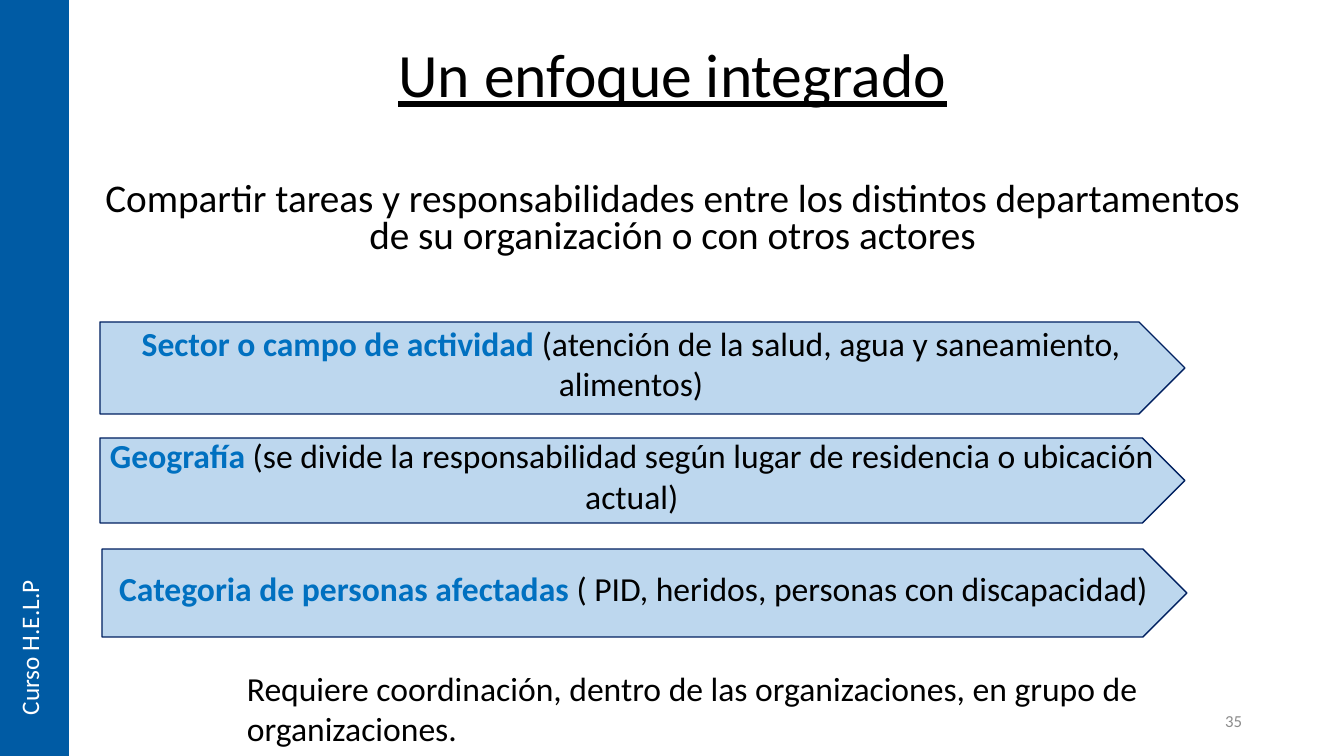
from pptx import Presentation
from pptx.dml.color import RGBColor
from pptx.enum.shapes import MSO_SHAPE
from pptx.enum.text import MSO_ANCHOR, PP_ALIGN
from pptx.util import Emu, Pt

PX = 914400 / 100.8
RECT, ARROW = MSO_SHAPE.RECTANGLE, MSO_SHAPE.PENTAGON
TOP, MID = MSO_ANCHOR.TOP, MSO_ANCHOR.MIDDLE
LEFT, CENTER, RIGHT = PP_ALIGN.LEFT, PP_ALIGN.CENTER, PP_ALIGN.RIGHT


def color(text):
    return RGBColor.from_string(text)


def write(shape, runs, size, align, anchor):
    frame = shape.text_frame
    frame.word_wrap = True
    frame.vertical_anchor = anchor
    para = frame.paragraphs[0]
    para.alignment = align
    for text, tint, bold in runs:
        run = para.add_run()
        run.text = text
        run.font.name = "Calibri"
        run.font.size = Pt(size)
        run.font.bold = bold
        run.font.color.rgb = color(tint)
    return para


deck = Presentation()
deck.slide_width = Emu(round(1344 * PX))
deck.slide_height = Emu(round(756 * PX))
slide = deck.slides.add_slide(deck.slide_layouts[6])
shapes = slide.shapes

bar = shapes.add_shape(RECT, 0, 0, Emu(round(69 * PX)), deck.slide_height)
bar.shadow.inherit = False
bar.fill.solid()
bar.fill.fore_color.rgb = color("005BA4")
bar.line.fill.background()

labels = [
    ((93, 5, 1159, 146), "Un enfoque integrado", 44, "000000", CENTER, MID),
    ((93, 177, 1159, 90), "Compartir tareas y responsabilidades entre los distintos "
     "departamentos de su organización o con otros actores", 28, "000000", CENTER, TOP),
    ((237, 663, 1107, 92), "Requiere coordinación, dentro de las organizaciones, "
     "en grupo de organizaciones.", 24, "000000", LEFT, TOP),
    ((9, 579, 50, 146), "Curso H.E.L.P", 18, "FFFFFF", LEFT, TOP),
    ((950, 701, 302, 40), "35", 12, "8C8C8C", RIGHT, MID),
]
boxes, paras = [], []
for place, text, size, tint, align, anchor in labels:
    box = shapes.add_textbox(*[Emu(round(n * PX)) for n in place])
    boxes.append(box)
    paras.append(write(box, [(text, tint, False)], size, align, anchor))

title, lead, _, course, _ = paras
title.line_spacing = 0.9
title.runs[0].font.underline = True
lead.line_spacing = 0.8
lead.space_before = Pt(10)
side = boxes[3].text_frame
side.word_wrap = False
side._txBody.bodyPr.set("vert", "vert270")

arrows = [
    (100, 322, 92, "Sector o campo de actividad ",
     "(atención de la salud, agua y saneamiento, alimentos)"),
    (100, 438, 85, "Geografía",
     " (se divide la responsabilidad según lugar de residencia o ubicación actual)"),
    (102, 549, 88, "Categoria de personas afectadas",
     " ( PID, heridos, personas con discapacidad)"),
]
for left, top, high, name, note in arrows:
    place = (left, top, 1085, high)
    arrow = shapes.add_shape(ARROW, *[Emu(round(n * PX)) for n in place])
    arrow.shadow.inherit = False
    arrow.fill.solid()
    arrow.fill.fore_color.rgb = color("BDD7EE")
    arrow.line.color.rgb = color("002060")
    arrow.line.width = Pt(1)
    arrow.text_frame.margin_top = 0
    arrow.text_frame.margin_bottom = Emu(round(10 * PX))
    write(arrow, [(name, "0070C0", True), (note, "000000", False)], 24, CENTER, MID)

deck.save("out.pptx")
